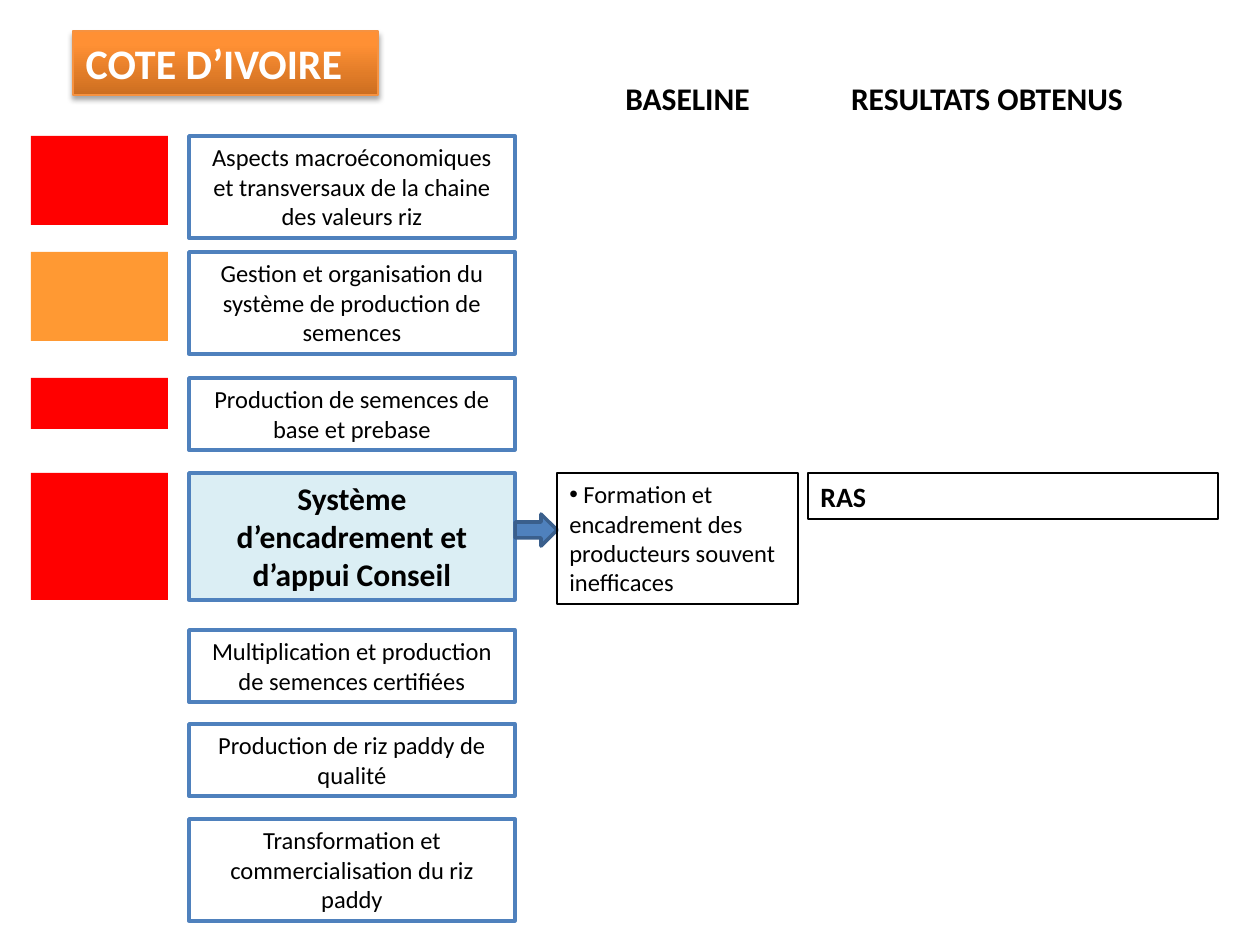
from lxml.etree import SubElement
from pptx import Presentation
from pptx.dml.color import RGBColor
from pptx.enum.shapes import MSO_SHAPE as Shape
from pptx.enum.text import MSO_ANCHOR as Anchor, MSO_AUTO_SIZE as AutoSize, PP_ALIGN as Align
from pptx.oxml import parse_xml
from pptx.oxml.ns import nsdecls, qn
from pptx.util import Emu, Pt

# Content: top, box height, text, status height, status colour
STAGES = [
    (136, 102, "Aspects macroéconomiques et transversaux de la chaine des valeurs riz", 89, "red"),
    (252, 102, "Gestion et organisation du système de production de semences", 89, "orange"),
    (378, 72, "Production de semences de base et prebase", 51, "red"),
    (473, 127, "Système d’encadrement et d’appui Conseil", 127, "red"),
    (630, 72, "Multiplication et production de semences certifiées", None, None),
    (724, 72, "Production de riz paddy de qualité", None, None),
    (819, 102, "Transformation et commercialisation du riz paddy", None, None),
]
ACTIVE = 3
TITLE = "COTE D’IVOIRE"
HEADINGS = [(577, 221, "BASELINE"), (798, 378, "RESULTATS OBTENUS")]
BASELINE = " Formation et encadrement des producteurs souvent inefficaces"
RESULT = "RAS"

COLORS = {
    "red": "FF0000", "orange": "FF9933", "white": "FFFFFF", "black": "000000",
    "blue": "4F81BD", "dark_blue": "3A5F8C", "pale_blue": "DBEEF4", "title_line": "F69240",
}
TITLE_GRADIENT = [(0, "CC6E20"), (80, "FF9034"), (100, "FF9136")]
FONT = "Calibri"
STATUS_X, STATUS_WIDTH = 31, 137
STAGE_X, STAGE_WIDTH = 189, 326


def px(value):
    return Emu(round(value * 914400 / 126))


def rgb(name):
    return RGBColor.from_string(COLORS[name])


def write(shape, text, size, bold=False, align=Align.LEFT, color="black",
          auto_size=AutoSize.SHAPE_TO_FIT_TEXT):
    frame = shape.text_frame
    frame.text = text
    frame_format = {"word_wrap": True, "auto_size": auto_size, "vertical_anchor": Anchor.TOP}
    for name, value in frame_format.items():
        setattr(frame, name, value)
    paragraph = frame.paragraphs[0]
    paragraph.alignment = align
    font = paragraph.runs[0].font
    for name, value in {"name": FONT, "size": Pt(size), "bold": bold}.items():
        setattr(font, name, value)
    font.color.rgb = rgb(color)
    return paragraph


def add_block(slide, box, fill=None, line=None, width=2, kind=Shape.RECTANGLE):
    shape = slide.shapes.add_shape(kind, *map(px, box))
    shape.shadow.inherit = False
    if fill:
        shape.fill.solid()
        shape.fill.fore_color.rgb = rgb(fill)
    else:
        shape.fill.background()
    if line:
        shape.line.color.rgb = rgb(line)
        shape.line.width = Pt(width)
    else:
        shape.line.fill.background()
    return shape


def add_title(slide):
    title = slide.shapes.title
    for name, value in {"left": 73, "top": 31, "width": 305, "height": 64}.items():
        setattr(title, name, px(value))
    # A fixed size keeps the placeholder from growing to its layout height
    write(title, TITLE, 24, True, color="white", auto_size=AutoSize.NONE)
    stops = "".join(
        f'<a:gs pos="{position * 1000}"><a:srgbClr val="{color}"/></a:gs>'
        for position, color in TITLE_GRADIENT)
    properties = title.element.spPr
    properties.append(parse_xml(
        f'<a:gradFill {nsdecls("a")} rotWithShape="1"><a:gsLst>{stops}</a:gsLst>'
        '<a:lin ang="16200000" scaled="0"/></a:gradFill>'))
    title.line.color.rgb = rgb("title_line")
    title.line.width = Pt(0.75)
    properties.append(parse_xml(
        f'<a:effectLst {nsdecls("a")}><a:outerShdw blurRad="{Pt(3.1)}" dist="{Pt(1.8)}" '
        'dir="5400000" rotWithShape="0"><a:srgbClr val="000000"><a:alpha val="35000"/>'
        '</a:srgbClr></a:outerShdw></a:effectLst>'))


def add_stages(slide):
    for index, (top, height, text, status_height, status) in enumerate(STAGES):
        active = index == ACTIVE
        box = add_block(slide, (STAGE_X, top, STAGE_WIDTH, height),
                        "pale_blue" if active else "white", "blue")
        write(box, text, 18 if active else 14, active, Align.CENTER)
        if status:
            add_block(slide, (STATUS_X, top, STATUS_WIDTH, status_height), status)


def add_details(slide):
    top = STAGES[ACTIVE][0]
    add_block(slide, (STAGE_X + STAGE_WIDTH, 514, 42, 32), "blue", "dark_blue",
              kind=Shape.RIGHT_ARROW)
    for left, width, text in HEADINGS:
        heading = slide.shapes.add_textbox(*map(px, (left, 73, width, 51)))
        write(heading, text, 18, True, Align.CENTER)
    baseline = add_block(slide, (557, top, 241, 131), line="black", width=1)
    paragraph = write(baseline, BASELINE, 14)
    properties = paragraph._p.get_or_add_pPr()
    SubElement(properties, qn("a:buFont"), typeface="Arial")
    SubElement(properties, qn("a:buChar"), char="•")
    result = add_block(slide, (808, top, 410, 46), line="black", width=1)
    write(result, RESULT, 16, True)


def main():
    presentation = Presentation()
    presentation.slide_width, presentation.slide_height = px(1260), px(945)
    slide = presentation.slides.add_slide(presentation.slide_layouts[5])
    add_title(slide)
    add_stages(slide)
    add_details(slide)
    presentation.save("out.pptx")


if __name__ == "__main__":
    main()
